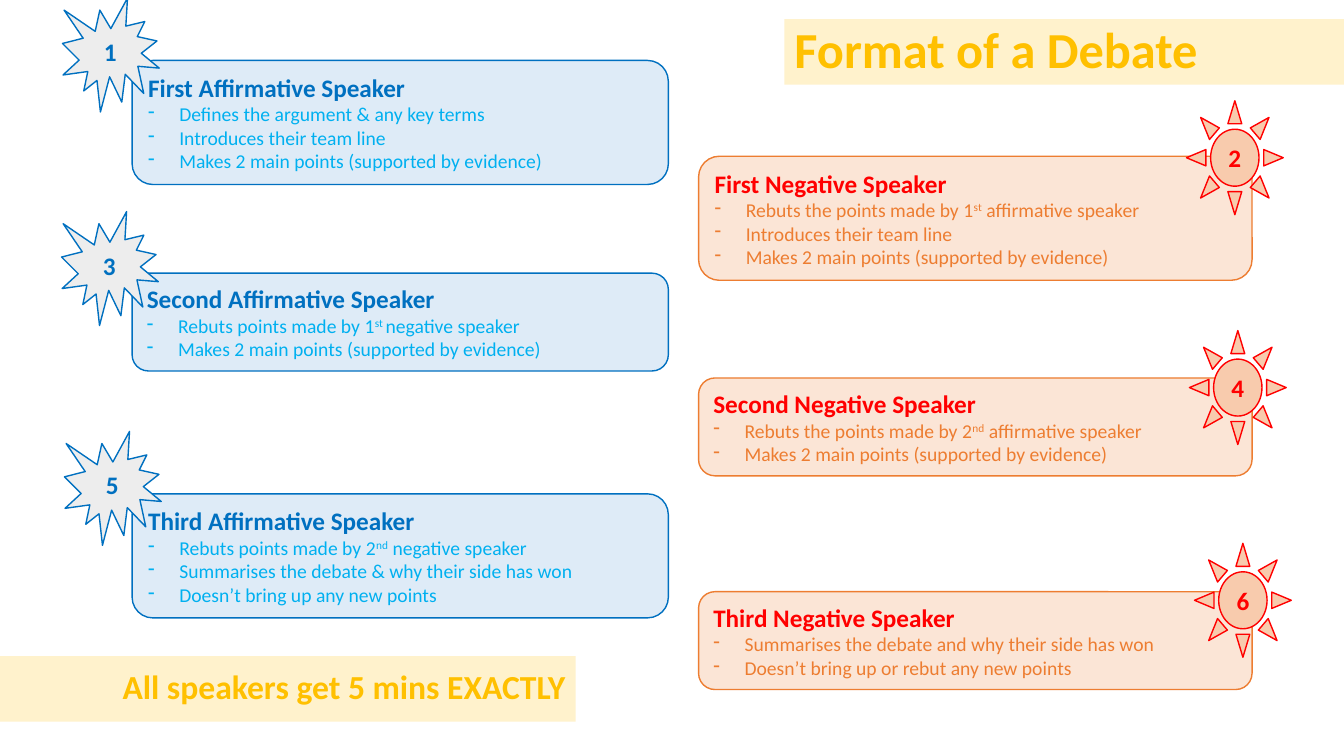
from dataclasses import dataclass

from lxml.etree import SubElement
from pptx import Presentation
from pptx.dml.color import RGBColor
from pptx.enum.shapes import MSO_SHAPE as Preset
from pptx.enum.text import MSO_ANCHOR as Anchor, MSO_AUTO_SIZE as AutoSize, PP_ALIGN as Align
from pptx.oxml.ns import qn
from pptx.util import Inches, Pt


@dataclass(frozen=True)
class Theme:
    font: str = "Calibri"
    title_size: int = 36
    banner_size: int = 24
    heading_size: int = 18
    point_size: int = 14
    banner_fill: str = "FFF2CC"
    banner_text: str = "FFC000"


@dataclass(frozen=True)
class Team:
    left: float
    cols: float
    card_fill: str
    card_line: str
    heading: str
    point: str
    badge: Preset
    badge_fill: str


theme = Theme()
affirmative = Team(9.83, 39.9, "DEEBF7", "0070C0", "0070C0", "00B0F0",
                   Preset.EXPLOSION1, "EDEDED")
negative = Team(51.98, 41.18, "FBE5D6", "ED7D31", "FF0000", "ED7D31",
                Preset.SUN, "F8CBAD")

# Team, number, card row, badge column and row, heading, points (^ encloses a superscript)
speakers = [
    (affirmative, 1, 8, 4.65, -0.25, "First Affirmative Speaker", [
        "Defines the argument & any key terms",
        "Introduces their team line",
        "Makes 2 main points (supported by evidence)"]),
    (negative, 2, 20.67, 88.28, 13.33, "First Negative Speaker", [
        "Rebuts the points made by 1^st^ affirmative speaker",
        "Introduces their team line",
        "Makes 2 main points (supported by evidence)"]),
    (affirmative, 3, 36.13, 4.58, 28, "Second Affirmative Speaker", [
        "Rebuts points made by 1^st ^negative speaker",
        "Makes 2 main points (supported by evidence)"]),
    (negative, 4, 50, 88.5, 43.73, "Second Negative Speaker", [
        "Rebuts the points made by 2^nd^ affirmative speaker",
        "Makes 2 main points (supported by evidence)"]),
    (affirmative, 5, 65.33, 4.8, 57.07, "Third Affirmative Speaker", [
        "Rebuts points made by 2^nd^ negative speaker",
        "Summarises the debate & why their side has won",
        "Doesn’t bring up any new points"]),
    (negative, 6, 78.27, 88.88, 71.87, "Third Negative Speaker", [
        "Summarises the debate and why their side has won",
        "Doesn’t bring up or rebut any new points"]),
]

# Slide on a grid of 100 columns by 100 rows
deck = Presentation()
deck.slide_width, deck.slide_height = Inches(13.33), Inches(7.5)
col, row = deck.slide_width / 100, deck.slide_height / 100
slide = deck.slides.add_slide(deck.slide_layouts[5])
CARD_PADDING, POINT_ROWS = 6, 3.47
BADGE_COLS, BADGE_ROWS = 7.2, 15.07
BANNER_COLS, BANNER_ROWS = 43.28, 8.67


def add_panel(preset, left, top, cols, rows, fill, line):
    panel = slide.shapes.add_shape(preset, round(left * col), round(top * row),
                                   round(cols * col), round(rows * row))
    panel.shadow.inherit = False
    panel.fill.solid()
    panel.fill.fore_color.rgb = RGBColor.from_string(fill)
    panel.line.color.rgb = RGBColor.from_string(line)
    panel.line.width = Pt(1)
    panel.text_frame.word_wrap = True
    panel.text_frame.auto_size = AutoSize.SHAPE_TO_FIT_TEXT
    return panel


def style(paragraph, size, color, bold, align):
    paragraph.alignment = align
    for run in paragraph.runs:
        run.font.name = theme.font
        run.font.size = Pt(size)
        run.font.bold = bold
        run.font.color.rgb = RGBColor.from_string(color)


# Speaker cards
for team, number, top, badge_left, badge_top, heading, points in speakers:
    card = add_panel(Preset.ROUNDED_RECTANGLE, team.left, top, team.cols,
                     CARD_PADDING + POINT_ROWS * len(points), team.card_fill, team.card_line)
    card.text_frame.text = heading
    style(card.text_frame.paragraphs[0], theme.heading_size, team.heading, True, Align.LEFT)
    for point in points:
        item = card.text_frame.add_paragraph()
        for index, part in enumerate(point.split("^")):
            run = item.add_run()
            run.text = part
            if index % 2:
                run.font._element.set("baseline", "30000")
        style(item, theme.point_size, team.point, False, Align.LEFT)
        # Hanging dash
        properties = item._p.get_or_add_pPr()
        properties.set("marL", str(Inches(0.31)))
        properties.set("indent", str(-Inches(0.31)))
        SubElement(properties, qn("a:buFontTx"))
        SubElement(properties, qn("a:buChar")).set("char", "-")

# Numbered badges, in front of the cards
for team, number, top, badge_left, badge_top, heading, points in speakers:
    badge = add_panel(team.badge, badge_left, badge_top, BADGE_COLS, BADGE_ROWS,
                      team.badge_fill, team.heading)
    badge.text_frame.text = str(number)
    style(badge.text_frame.paragraphs[0], theme.heading_size, team.heading, True, Align.CENTER)

# Title and time limit banners
title = slide.shapes.title
time_limit = add_panel(Preset.RECTANGLE, 0, 0, BANNER_COLS, BANNER_ROWS,
                       theme.banner_fill, theme.banner_fill)
banners = [
    (title, 58.36, 2.53, "Format of a Debate", theme.title_size, Align.LEFT),
    (time_limit, -0.45, 86.8, "All speakers get 5 mins EXACTLY", theme.banner_size, Align.RIGHT),
]
for banner, left, top, wording, size, align in banners:
    banner.left, banner.top = round(left * col), round(top * row)
    banner.width, banner.height = round(BANNER_COLS * col), round(BANNER_ROWS * row)
    banner.fill.solid()
    banner.fill.fore_color.rgb = RGBColor.from_string(theme.banner_fill)
    banner.line.fill.background()
    banner.text_frame.text = wording
    banner.text_frame.word_wrap = True
    banner.text_frame.auto_size = AutoSize.NONE
    banner.text_frame.vertical_anchor = Anchor.MIDDLE
    banner.text_frame.paragraphs[0].line_spacing = 0.9
    style(banner.text_frame.paragraphs[0], size, theme.banner_text, True, align)

deck.save("out.pptx")
